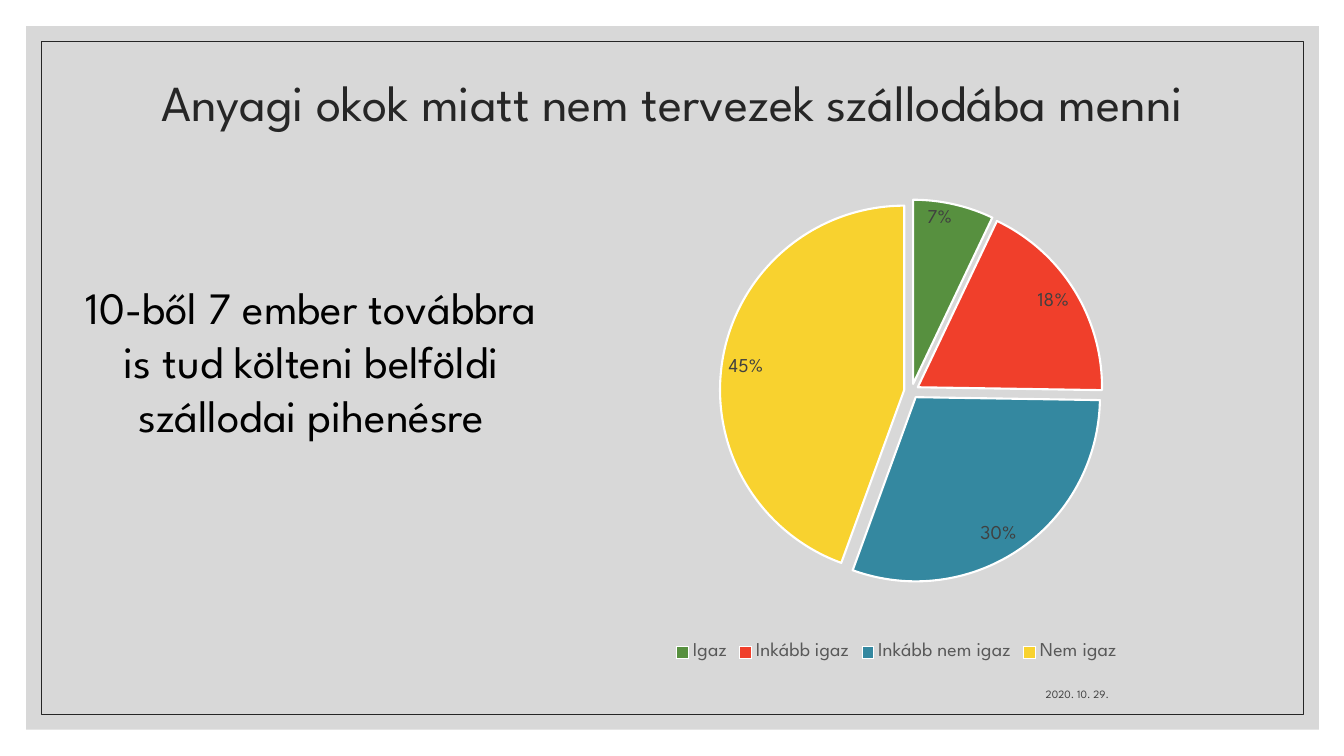
from lxml.etree import SubElement
from pptx import Presentation
from pptx.chart.data import CategoryChartData
from pptx.dml.color import RGBColor
from pptx.enum.chart import XL_CHART_TYPE, XL_LABEL_POSITION, XL_LEGEND_POSITION
from pptx.enum.shapes import MSO_SHAPE
from pptx.enum.text import MSO_ANCHOR, PP_ALIGN
from pptx.oxml import parse_xml
from pptx.oxml.ns import nsdecls, qn
from pptx.util import Inches, Pt

FONT = "League Spartan"
COLORS = {
    "panel": "BFBFBF", "ink": "262626", "label": "404040", "legend": "595959",
    "black": "000000", "white": "FFFFFF",
    "green": "57903F", "red": "F03F2B", "blue": "3488A0", "yellow": "F8D22F",
}
ANSWERS = [("Igaz", 0.07, "green"), ("Inkább igaz", 0.18, "red"),
           ("Inkább nem igaz", 0.3, "blue"), ("Nem igaz", 0.44, "yellow")]


def rgb(name):
    return RGBColor.from_string(COLORS[name])


def style_font(font, size, color):
    font.name = FONT
    font.size = Pt(size)
    font.color.rgb = rgb(color)


def write(tf, text, size=14, color="black", align=PP_ALIGN.CENTER, spacing=None):
    p = tf.paragraphs[0]
    p.alignment = align
    if spacing:
        p.line_spacing = spacing
    r = p.add_run()
    r.text = text
    style_font(r.font, size, color)


class SlideBuilder:
    def __init__(self, slide):
        self.s = slide

    def rect(self, box, fill=None, opacity=100, line=None):
        sp = self.s.shapes.add_shape(MSO_SHAPE.RECTANGLE, *map(Inches, box))
        sp.shadow.inherit = False
        if fill:
            sp.fill.solid()
            sp.fill.fore_color.rgb = rgb(fill)
            clr = sp.fill._xPr.find(".//" + qn("a:srgbClr"))
            SubElement(clr, qn("a:alpha"), val=str(opacity * 1000))
        else:
            sp.fill.background()
        if line:
            sp.line.color.rgb = rgb(line)
            sp.line.width = Pt(0.5)
        else:
            sp.line.fill.background()

    def text(self, box, text, anchor=MSO_ANCHOR.TOP, **fmt):
        tf = self.s.shapes.add_textbox(*map(Inches, box)).text_frame
        tf.word_wrap = True
        tf.vertical_anchor = anchor
        write(tf, text, **fmt)

    def pie(self, box, answers, plot_layout, explosion, custom_labels):
        names, values, colors = zip(*answers)
        data = CategoryChartData(number_format="0%")
        data.categories = names
        data.add_series("Series 1", values)
        chart = self.s.shapes.add_chart(XL_CHART_TYPE.PIE, *map(Inches, box), data).chart
        style_font(chart.font, 10, "black")
        chart.has_title = False
        chart.has_legend = True
        chart.legend.position = XL_LEGEND_POSITION.BOTTOM
        chart.legend.include_in_layout = False
        style_font(chart.legend.font, 14, "legend")

        plot = chart.plots[0]
        plot.vary_by_categories = True
        series = plot.series[0]
        for i, color in enumerate(colors):
            fmt = series.points[i].format
            fmt.fill.solid()
            fmt.fill.fore_color.rgb = rgb(color)
            fmt.line.color.rgb = rgb("white")
            fmt.line.width = Pt(1.5)

        labels = series.data_labels
        labels.show_value = True
        labels.show_percentage = False
        labels.number_format = "0%"
        labels.number_format_is_linked = False
        labels.position = XL_LABEL_POSITION.INSIDE_END
        style_font(labels.font, 14, "label")
        for i, text in custom_labels.items():
            label = series.points[i].data_label
            write(label.text_frame, text, color="label")
            label.position = XL_LABEL_POSITION.INSIDE_END

        self.explode(series, explosion)
        self.place_plot(chart, plot_layout)

    @staticmethod
    def explode(series, percent):
        first_point = series._element.find(qn("c:dPt"))
        first_point.addprevious(
            parse_xml(f'<c:explosion {nsdecls("c")} val="{percent}"/>'))

    @staticmethod
    def place_plot(chart, layout):
        """Set the inner plot area as fractions of the chart frame."""
        area = chart._chartSpace.find(".//" + qn("c:plotArea"))
        for old in area.findall(qn("c:layout")):
            area.remove(old)
        modes = "".join(f'<c:{k}Mode val="edge"/>' for k in "xy")
        sizes = "".join(f'<c:{k} val="{v}"/>' for k, v in zip("xywh", layout))
        area.insert(0, parse_xml(
            f'<c:layout {nsdecls("c")}><c:manualLayout><c:layoutTarget val="inner"/>'
            f'{modes}{sizes}</c:manualLayout></c:layout>'))


def main():
    prs = Presentation()
    prs.slide_width, prs.slide_height = Inches(13.33), Inches(7.5)
    b = SlideBuilder(prs.slides.add_slide(prs.slide_layouts[6]))
    b.rect((0.26, 0.26, 12.82, 6.98), fill="panel", opacity=60)
    b.rect((0.41, 0.41, 12.52, 6.68), line="ink")
    b.text((0.45, 0.55, 12.44, 0.98), "Anyagi okok miatt nem tervezek szállodába menni",
           anchor=MSO_ANCHOR.MIDDLE, size=36, color="ink", spacing=0.9)
    b.text((7.94, 6.6, 3.16, 0.4), "2020. 10. 29.", anchor=MSO_ANCHOR.BOTTOM,
           size=8, color="label", align=PP_ALIGN.RIGHT)
    b.text((0.61, 2.73, 4.96, 2.26),
           "10-ből 7 ember továbbra is tud költeni belföldi szállodai pihenésre", size=32)
    b.pie((5.24, 1.83, 7.31, 4.77), ANSWERS, plot_layout=(0.26, 0.03, 0.52, 0.8),
          explosion=4, custom_labels={3: "45%"})
    prs.save("out.pptx")


if __name__ == "__main__":
    main()
